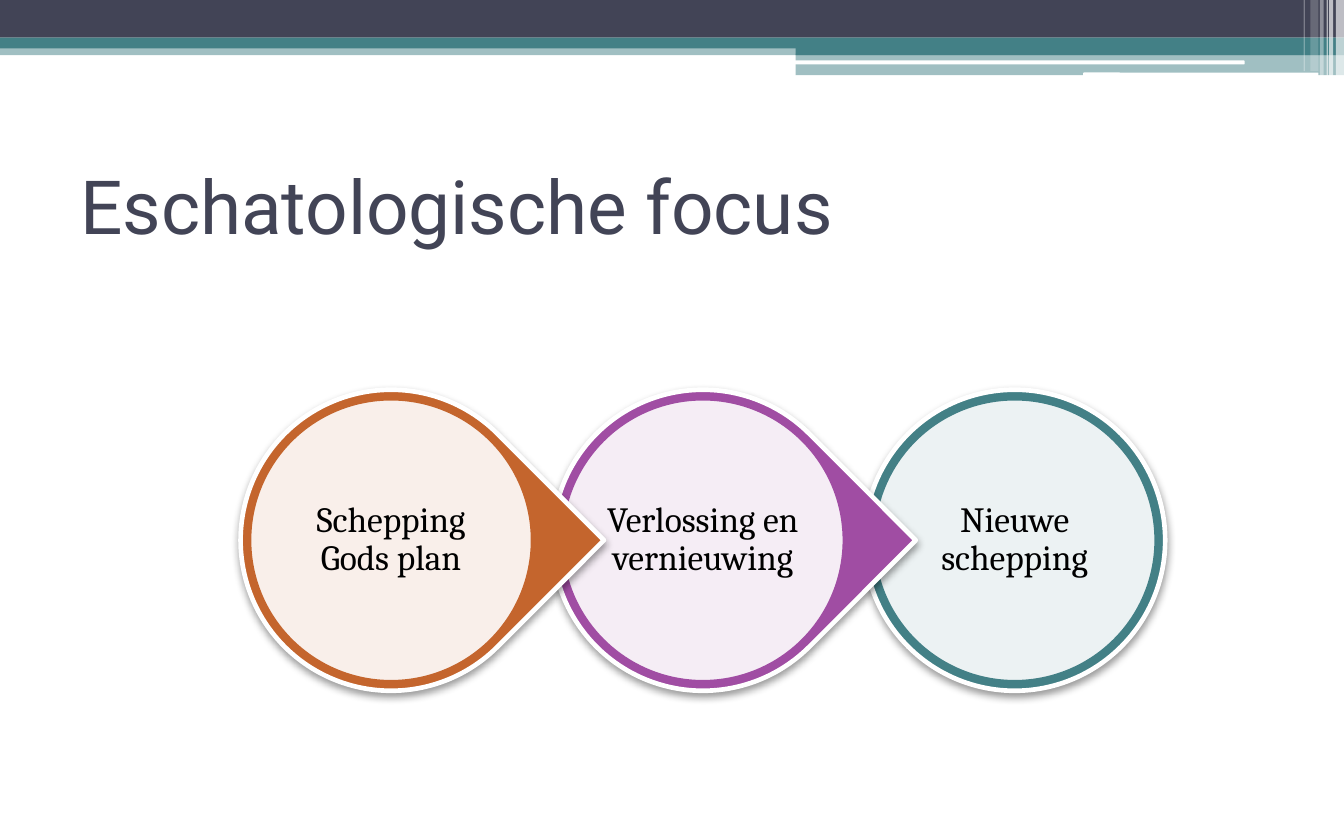
from lxml import etree
from pptx import Presentation
from pptx.dml.color import RGBColor
from pptx.enum.shapes import MSO_SHAPE
from pptx.enum.text import MSO_ANCHOR, PP_ALIGN
from pptx.oxml.ns import qn
from pptx.util import Inches, Pt

RECT = MSO_SHAPE.RECTANGLE
ROUND = MSO_SHAPE.ROUNDED_RECTANGLE
OVAL = MSO_SHAPE.OVAL
DROP = MSO_SHAPE.TEAR
MID = MSO_ANCHOR.MIDDLE
LEFT, CENTER = PP_ALIGN.LEFT, PP_ALIGN.CENTER

WIDE, HIGH = 10, 6.25
COLORS = {
    "white": "FFFFFF", "black": "000000", "slate": "424456",
    "teal": "438086", "plum": "A04DA3", "rust": "C4652D",
}
TITLE = "Eschatologische focus"
STEPS = [
    ("Schepping\nGods plan", "rust", DROP),
    ("Verlossing en vernieuwing", "plum", DROP),
    ("Nieuwe schepping", "teal", OVAL),
]
BANDS = [
    (RECT, 0, 0.33, WIDE, 0.08, "teal", 50),
    (RECT, 0, 0, WIDE, 0.28, "slate", 100),
    (RECT, 0, 0.28, WIDE, 0.08, "teal", 100),
    (RECT, 5.92, 0.33, 4.08, 0.08, "teal", 100),
    (RECT, 5.92, 0.4, 4.08, 0.16, "teal", 50),
    (ROUND, 5.91, 0.45, 3.35, 0.03, "white", 100),
    (ROUND, 8.06, 0.54, 1.75, 0.03, "white", 100),
]
STRIPES = [
    (9.94, 0.06, 0.57, 65), (9.89, 0.03, 0.57, 65), (9.87, 0.01, 0.57, 60),
    (9.82, 0.03, 0.57, 40), (9.75, 0.06, 0.53, 20), (9.7, 0.01, 0.53, 30),
]
FIRST, PITCH, AXIS = 2.91, 2.32, 4.02
OUTER, INNER, LABEL = 2.24, 2.1, 1.5

deck = Presentation()
deck.slide_width, deck.slide_height = Inches(WIDE), Inches(HIGH)
slide = deck.slides.add_slide(deck.slide_layouts[6])


def rgb(name):
    return RGBColor.from_string(COLORS[name])


def add_form(kind, x, y, w, h, fill, alpha=100, line=None, weight=1):
    form = slide.shapes.add_shape(kind, Inches(x), Inches(y), Inches(w), Inches(h))
    form.shadow.inherit = False
    form.fill.solid()
    form.fill.fore_color.rgb = rgb(fill)
    if alpha < 100:
        tint = form._element.spPr.find(qn("a:solidFill"))[0]
        etree.SubElement(tint, qn("a:alpha"), val=str(alpha * 1000))
    if line:
        form.line.color.rgb = rgb(line)
        form.line.width = Pt(weight)
    else:
        form.line.fill.background()
    return form


def add_shade(form):
    list_ = form._element.spPr.find(qn("a:effectLst"))
    shade = etree.SubElement(
        list_, qn("a:outerShdw"), blurRad=str(Pt(4.1)), dist=str(Pt(2)),
        dir="5400000", rotWithShape="0")
    tint = etree.SubElement(shade, qn("a:srgbClr"), val=COLORS["black"])
    etree.SubElement(tint, qn("a:alpha"), val="40000")


def add_text(text, x, y, w, h, font, size, color, align=LEFT, inset=None, space=None):
    box = slide.shapes.add_textbox(Inches(x), Inches(y), Inches(w), Inches(h))
    frame = box.text_frame
    frame.word_wrap = True
    frame.vertical_anchor = MID
    if inset is not None:
        frame.margin_left = frame.margin_right = Inches(inset)
        frame.margin_top = frame.margin_bottom = Inches(inset)
    para = frame.paragraphs[0]
    para.text = text
    para.alignment = align
    para.line_spacing = space
    for run in para.runs:
        run.font.name = font
        run.font.size = Pt(size)
        run.font.color.rgb = rgb(color)


def corner(mid, size):
    return mid - size / 2, AXIS - size / 2, size, size


for band in BANDS:
    add_form(*band)
for x, w, h, alpha in STRIPES:
    add_form(RECT, x, 0, w, h, "white", alpha)

add_text(TITLE, 0.5, 1.04, 9, 0.97, "Roboto", 40, "slate")

for col, (text, color, kind) in reversed(list(enumerate(STEPS))):
    mid = FIRST + col * PITCH
    disc = add_form(kind, *corner(mid, OUTER), color, line="white", weight=2.5)
    add_shade(disc)
    if kind == DROP:
        disc.rotation = 45
    add_form(OVAL, *corner(mid, INNER), "white", 90, color, 1.5)
    add_text(text, *corner(mid, LABEL), "Cambria", 19, "black",
             align=CENTER, inset=0.03, space=0.9)

deck.save("out.pptx")
